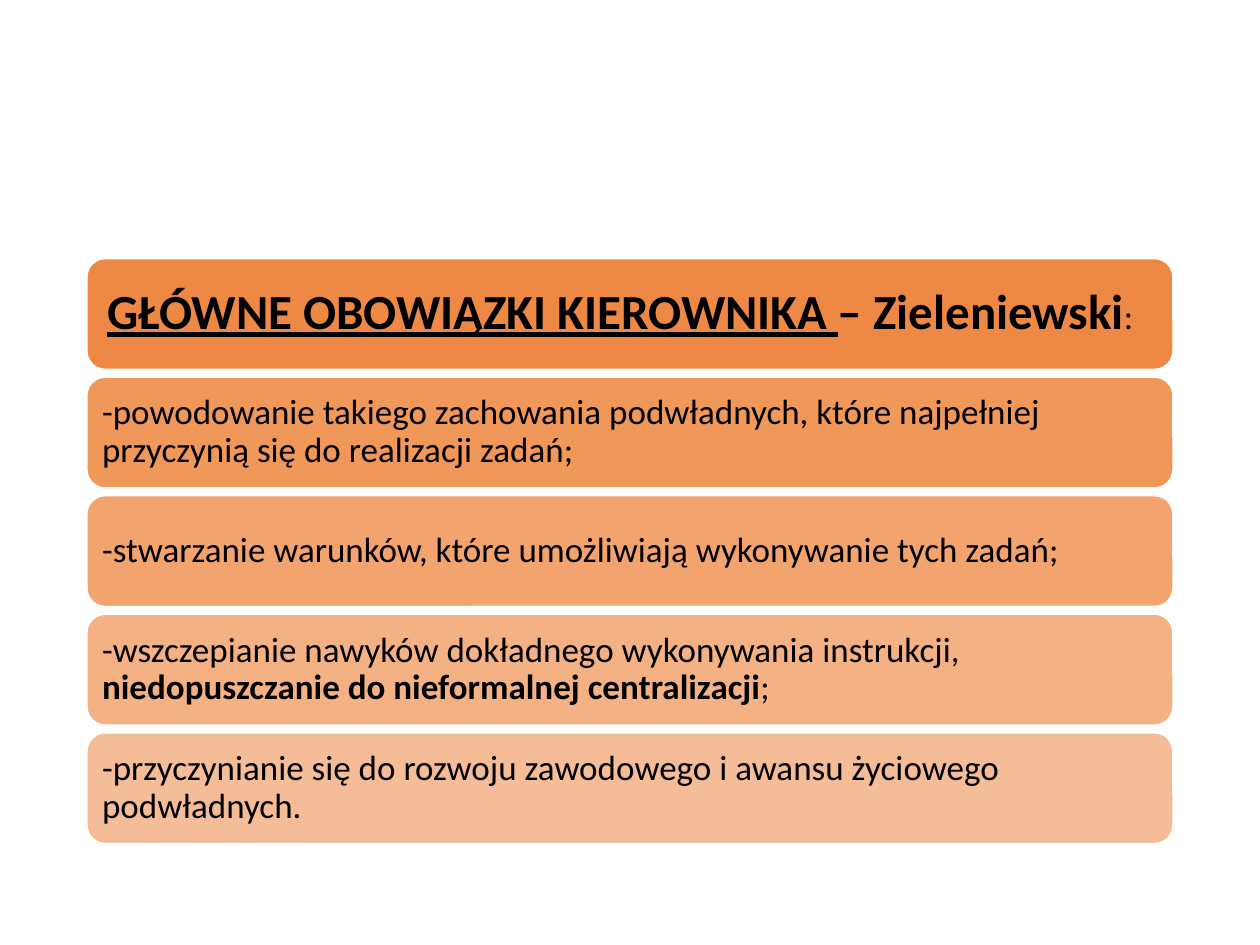
from lxml.etree import SubElement as Sub
from pptx import Presentation
from pptx.dml.color import RGBColor
from pptx.enum.shapes import MSO_SHAPE as Kind
from pptx.enum.text import MSO_ANCHOR as Anchor, PP_ALIGN as Align
from pptx.oxml.ns import qn
from pptx.util import Cm, Pt

# Layout in cm
LEFT, TOP, WIDTH, HEIGHT, STEP = 1.75, 5.21, 21.9, 2.24, 2.39

# Text formats
HEAD = {"size": Pt(28), "bold": True}
TITLE = {**HEAD, "underline": True}
BODY = {"size": Pt(20), "bold": False}
STRONG = {**BODY, "bold": True}

# One bar per entry: runs of (text, format)
BARS = [
    [("GŁÓWNE OBOWIĄZKI KIEROWNIKA ", TITLE), ("– Zieleniewski", HEAD), (":", BODY)],
    [("-powodowanie takiego zachowania podwładnych, które najpełniej "
      "przyczynią się do realizacji zadań;", BODY)],
    [("-stwarzanie warunków, które umożliwiają wykonywanie tych zadań;", BODY)],
    [("-wszczepianie nawyków dokładnego wykonywania instrukcji, ", BODY),
     ("niedopuszczanie do nieformalnej centralizacji", STRONG), (";", BODY)],
    [("-przyczynianie się do rozwoju zawodowego i awansu życiowego "
      "podwładnych.", BODY)],
]


def paint(color, code):
    color.rgb = RGBColor.from_string(code)


def assign(item, values):
    for name, value in values.items():
        setattr(item, name, value)


class Deck:
    font, ink, fill, edge = "Calibri", "000000", "ED7D31", "FFFFFF"

    def __init__(self):
        self.file = Presentation()
        assign(self.file, {"slide_width": Cm(25.4), "slide_height": Cm(19.05)})
        self.slide = self.file.slides.add_slide(self.file.slide_layouts[6])
        self.group = self.slide.shapes.add_group_shape()

    def bar(self, top, alpha, inset, runs):
        box = self.group.shapes.add_shape(
            Kind.ROUNDED_RECTANGLE, Cm(LEFT), Cm(top), Cm(WIDTH), Cm(HEIGHT))
        box.shadow.inherit = False
        # Fill with opacity, thin edge
        box.fill.solid()
        paint(box.fill.fore_color, self.fill)
        tint = box._element.spPr.find(qn("a:solidFill")).find(qn("a:srgbClr"))
        Sub(tint, qn("a:alpha"), val=str(alpha * 1000))
        paint(box.line.color, self.edge)
        box.line.width = Pt(1)
        self.label(box.text_frame, inset, runs)

    def label(self, frame, inset, runs):
        assign(frame, {"word_wrap": True, "vertical_anchor": Anchor.MIDDLE})
        assign(frame, {f"margin_{side}": Cm(inset)
                       for side in ("left", "top", "right", "bottom")})
        para = frame.paragraphs[0]
        assign(para, {"alignment": Align.LEFT, "line_spacing": 0.9})
        for text, style in runs:
            run = para.add_run()
            run.text = text
            assign(run.font, {"name": self.font, **style})
            paint(run.font.color, self.ink)


def main():
    deck = Deck()
    # Bars fade from top to bottom
    for row, runs in enumerate(BARS):
        deck.bar(TOP + row * STEP, 90 - 10 * row, 0.2 if row else 0.3, runs)
    deck.file.save("out.pptx")


if __name__ == "__main__":
    main()
